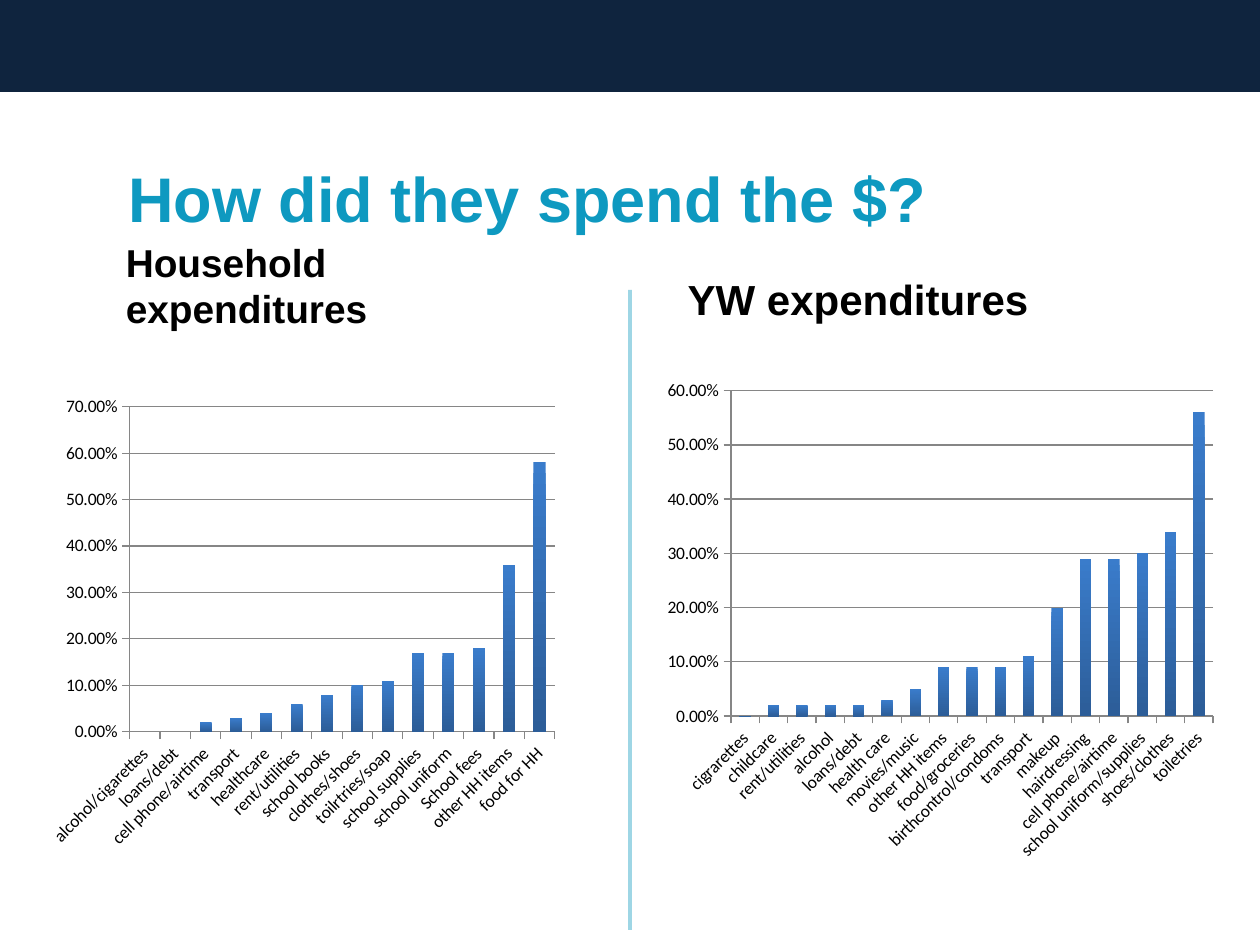
from dataclasses import dataclass

from lxml import etree
from pptx import Presentation
from pptx.chart.data import CategoryChartData
from pptx.dml.color import RGBColor
from pptx.enum.chart import XL_CHART_TYPE, XL_TICK_MARK
from pptx.enum.shapes import MSO_CONNECTOR, MSO_SHAPE
from pptx.enum.text import MSO_ANCHOR, PP_ALIGN
from pptx.oxml.ns import qn
from pptx.util import Pt


@dataclass(frozen=True)
class Theme:
    navy: RGBColor = RGBColor(0x0F, 0x24, 0x3E)
    teal: RGBColor = RGBColor(0x0E, 0x99, 0xC0)
    black: RGBColor = RGBColor(0, 0, 0)
    axis: RGBColor = RGBColor(0x86, 0x86, 0x86)
    bar_top: RGBColor = RGBColor(0x3A, 0x7C, 0xCB)
    bar_foot: RGBColor = RGBColor(0x2C, 0x5D, 0x98)
    text_font: str = "Arial"
    chart_font: str = "Calibri"
    title_size: float = 36
    chart_size: float = 10


@dataclass(frozen=True)
class Box:
    left: float
    top: float
    width: float
    height: float

    def lengths(self) -> tuple:
        return Pt(self.left), Pt(self.top), Pt(self.width), Pt(self.height)


@dataclass(frozen=True)
class Panel:
    heading: str
    heading_box: Box
    heading_size: float
    heading_inset: float
    chart_box: Box
    plot: Box  # fractions of the chart area
    top_value: float
    spending: dict[str, float]


THEME = Theme()

HOUSEHOLD = Panel(
    "Household expenditures", Box(64.8, 142.6, 268.6, 50.4), 22.2, 3.6,
    Box(25.2, 193, 296.6, 313.2), Box(0.165, 0.126, 0.819, 0.593), 0.7,
    {
        "alcohol/cigarettes": 0, "loans/debt": 0, "cell phone/airtime": 0.02,
        "transport": 0.03, "healthcare": 0.04, "rent/utilities": 0.06,
        "school books": 0.08, "clothes/shoes": 0.1, "toilrtries/soap": 0.11,
        "school supplies": 0.17, "school uniform": 0.17, "School fees": 0.18,
        "other HH items": 0.36, "food for HH": 0.58,
    },
)
YOUNG_WOMEN = Panel(
    "YW expenditures", Box(385.9, 157.4, 268.6, 60), 24, 32.4,
    Box(371.5, 217.4, 334.8, 311), Box(0.138, 0.019, 0.823, 0.598), 0.6,
    {
        "cigrarettes": 0, "childcare": 0.02, "rent/utilities": 0.02,
        "alcohol": 0.02, "loans/debt": 0.02, "health care": 0.03,
        "movies/music": 0.05, "other HH items": 0.09, "food/groceries": 0.09,
        "birthcontrol/condoms": 0.09, "transport": 0.11, "makeup": 0.2,
        "hairdressing": 0.29, "cell phone/airtime": 0.29,
        "school uniform/supplies": 0.3, "shoes/clothes": 0.34, "toiletries": 0.56,
    },
)


def set_format(target, values: dict) -> None:
    for name, value in values.items():
        setattr(target, name, value)


def write_text(frame, text: str, size: float, color: RGBColor, anchor, inset: float = 3.6) -> None:
    set_format(frame, {"word_wrap": True, "vertical_anchor": anchor, "margin_bottom": Pt(inset)})
    frame.text = text
    line = frame.paragraphs[0]
    line.alignment = PP_ALIGN.LEFT
    set_format(line.runs[0].font, {"name": THEME.text_font, "size": Pt(size), "bold": True})
    line.runs[0].font.color.rgb = color


def add_band(slide) -> None:
    band = slide.shapes.add_shape(MSO_SHAPE.RECTANGLE, *Box(0, 0, 720, 52.6).lengths())
    band.shadow.inherit = False
    band.fill.solid()
    band.fill.fore_color.rgb = THEME.navy
    band.line.fill.background()


def add_divider(slide) -> None:
    divider = slide.shapes.add_connector(
        MSO_CONNECTOR.STRAIGHT, Pt(360), Pt(165.6), Pt(360), Pt(531.4))
    divider.line.width = Pt(2)
    divider.line.color.rgb = THEME.teal
    properties = divider.element.spPr
    color = properties.find(".//" + qn("a:srgbClr"))
    etree.SubElement(color, qn("a:alpha"), val="40000")
    etree.SubElement(properties, qn("a:effectLst"))


def place_plot(chart, plot: Box) -> None:
    """Fix the inner plot area as fractions of the chart."""
    area = chart.element.find(".//" + qn("c:plotArea"))
    for old in area.findall(qn("c:layout")):
        area.remove(old)
    layout = etree.Element(qn("c:layout"))
    manual = etree.SubElement(layout, qn("c:manualLayout"))
    settings = {
        "layoutTarget": "inner", "xMode": "edge", "yMode": "edge",
        "x": plot.left, "y": plot.top, "w": plot.width, "h": plot.height,
    }
    for tag, value in settings.items():
        etree.SubElement(manual, qn(f"c:{tag}"), val=str(value))
    area.insert(0, layout)


def add_spending_chart(slide, panel: Panel) -> None:
    data = CategoryChartData(number_format="0.00%")
    data.categories = list(panel.spending)
    data.add_series("Series 1", list(panel.spending.values()))
    chart = slide.shapes.add_chart(
        XL_CHART_TYPE.COLUMN_CLUSTERED, *panel.chart_box.lengths(), data).chart
    set_format(chart, {"has_legend": False, "has_title": False})
    set_format(chart.font, {"name": THEME.chart_font, "size": Pt(THEME.chart_size)})
    chart.font.color.rgb = THEME.black
    place_plot(chart, panel.plot)

    # Axes and gridlines
    amounts, items = chart.value_axis, chart.category_axis
    set_format(amounts, {"minimum_scale": 0, "maximum_scale": panel.top_value,
                         "major_unit": 0.1, "has_major_gridlines": True})
    set_format(amounts.tick_labels, {"number_format": "0.00%", "number_format_is_linked": False})
    for axis in (amounts, items):
        axis.major_tick_mark = XL_TICK_MARK.OUTSIDE
    for rule in (amounts.format.line, items.format.line, amounts.major_gridlines.format.line):
        rule.width = Pt(0.75)
        rule.color.rgb = THEME.axis
    items.tick_labels.font.size = Pt(THEME.chart_size)
    item_axis = chart.element.find(".//" + qn("c:catAx"))
    item_axis.find(".//" + qn("a:bodyPr")).set("rot", "-2700000")

    # Bars
    bars = chart.plots[0]
    set_format(bars, {"gap_width": 150, "vary_by_categories": False})
    fill = bars.series[0].format.fill
    fill.gradient()
    fill.gradient_angle = 270
    for stop, color in zip(fill.gradient_stops, (THEME.bar_top, THEME.bar_foot)):
        stop.color.rgb = color


def add_panel(slide, panel: Panel) -> None:
    heading = slide.shapes.add_textbox(*panel.heading_box.lengths())
    write_text(heading.text_frame, panel.heading, panel.heading_size,
               THEME.black, MSO_ANCHOR.BOTTOM, panel.heading_inset)
    add_spending_chart(slide, panel)


def main() -> None:
    deck = Presentation()
    set_format(deck, {"slide_width": Pt(720), "slide_height": Pt(540)})
    slide = deck.slides.add_slide(deck.slide_layouts[5])
    add_band(slide)
    add_divider(slide)

    # Title
    title = slide.shapes.title
    title_place = Box(66.2, 75.6, 588.2, 74.2).lengths()
    set_format(title, dict(zip(("left", "top", "width", "height"), title_place)))
    write_text(title.text_frame, "How did they spend the $?", THEME.title_size,
               THEME.teal, MSO_ANCHOR.MIDDLE)

    for panel in (HOUSEHOLD, YOUNG_WOMEN):
        add_panel(slide, panel)
    deck.save("out.pptx")


if __name__ == "__main__":
    main()
